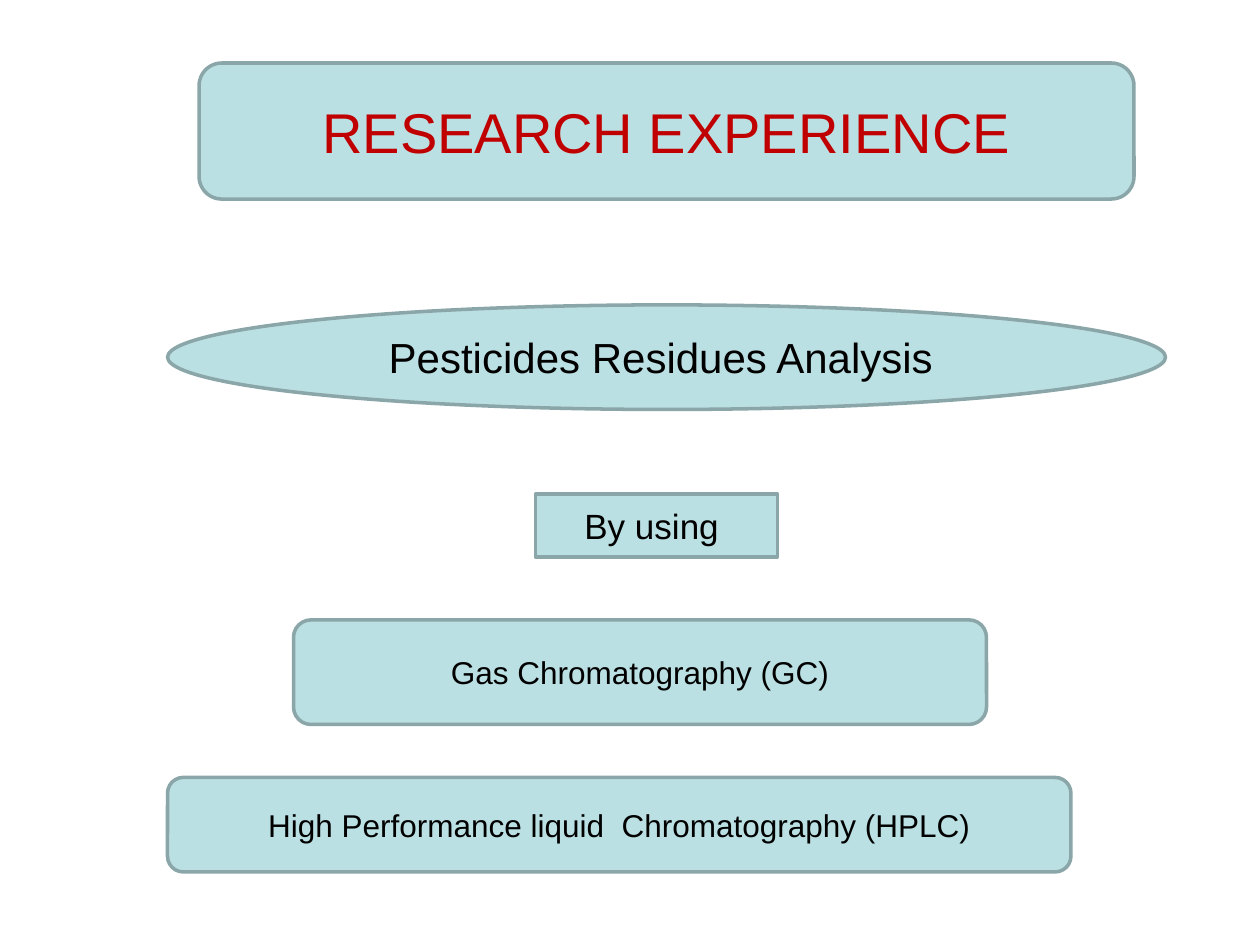
import pptx
import pptx.util
from pptx.dml.color import RGBColor
from pptx.enum.shapes import MSO_SHAPE
from pptx.enum.text import MSO_ANCHOR, PP_ALIGN
from pptx.util import Inches

PALE_TEAL = RGBColor(0xBB, 0xE0, 0xE3)
GREY_TEAL = RGBColor(0x8A, 0xA6, 0xA8)
DARK_RED = RGBColor(0xC0, 0x00, 0x00)
BLACK = RGBColor(0x00, 0x00, 0x00)


class SlideBuilder:
    font = "Arial"
    fill = PALE_TEAL
    outline = GREY_TEAL
    outline_width = pptx.util.Pt(2)

    def __init__(self, slide):
        self.s = slide

    def box(self, kind, left, top, width, height, text, size, color=BLACK):
        """Add a filled, outlined shape with centred text; lengths in inches."""
        sp = self.s.shapes.add_shape(
            kind, Inches(left), Inches(top), Inches(width), Inches(height))
        sp.shadow.inherit = False
        sp.fill.solid()
        sp.fill.fore_color.rgb = self.fill
        sp.line.color.rgb = self.outline
        sp.line.width = self.outline_width
        tf = sp.text_frame
        tf.word_wrap = True
        tf.vertical_anchor = MSO_ANCHOR.MIDDLE
        p = tf.paragraphs[0]
        p.text = text
        p.alignment = PP_ALIGN.CENTER
        p.font.name = self.font
        p.font.size = pptx.util.Pt(size)
        p.font.color.rgb = color


def main():
    prs = pptx.Presentation()
    prs.slide_width, prs.slide_height = Inches(10), Inches(7.5)
    slide = SlideBuilder(prs.slides.add_slide(prs.slide_layouts[6]))

    rounded = MSO_SHAPE.ROUNDED_RECTANGLE
    slide.box(rounded, 1.58, 0.5, 7.42, 1.08, "RESEARCH EXPERIENCE", 32, DARK_RED)
    slide.box(MSO_SHAPE.OVAL, 1.33, 2.42, 7.92, 0.83,
              "Pesticides Residues Analysis ", 24)
    slide.box(MSO_SHAPE.RECTANGLE, 4.25, 3.92, 1.92, 0.5, "By using ", 20)
    slide.box(rounded, 2.33, 4.92, 5.5, 0.83, "Gas Chromatography (GC)", 18)
    slide.box(rounded, 1.33, 6.17, 7.17, 0.75,
              "High Performance liquid  Chromatography (HPLC)", 18)

    prs.save("out.pptx")


if __name__ == "__main__":
    main()
